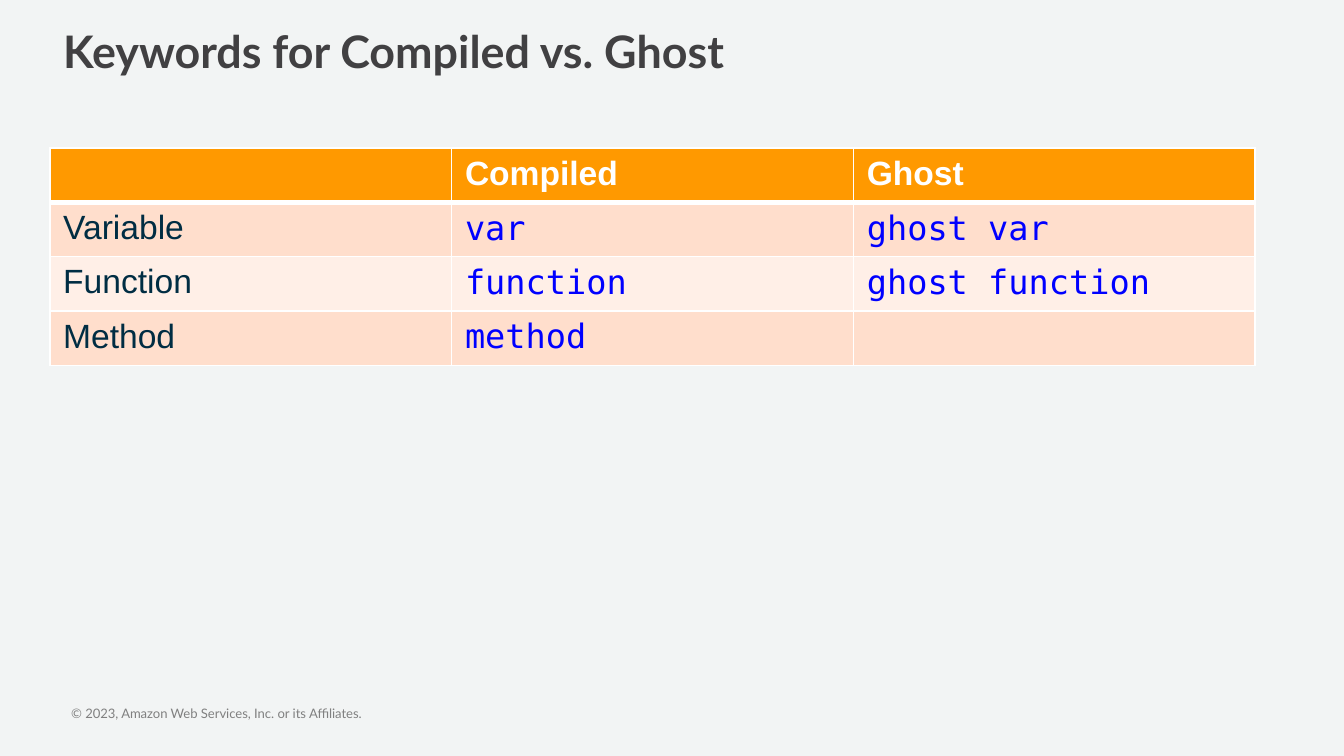
from lxml import etree
from pptx import Presentation
from pptx.dml.color import RGBColor
from pptx.enum.text import MSO_ANCHOR, MSO_AUTO_SIZE, PP_ALIGN
from pptx.oxml.ns import qn
from pptx.util import Inches, Pt

LEFT = PP_ALIGN.LEFT
TOP = MSO_ANCHOR.TOP
NO_FIT = MSO_AUTO_SIZE.NONE

HEADER = "FF9900"
BANDS = ["FFDECC", "FFEFE7"]
ROWS = [
    ["", "Compiled", "Ghost"],
    ["Variable", "var", "ghost var"],
    ["Function", "function", "ghost function"],
    ["Method", "method", ""],
]


def rgb(value):
    return RGBColor.from_string(value)


def style(p, name, size, color, bold=False):
    p.alignment = LEFT
    p.font.name = name
    p.font.size = Pt(size)
    p.font.bold = bold
    p.font.color.rgb = rgb(color)


def add_title(s, x, y, w, h, text):
    sp = s.shapes.title
    sp.left, sp.top, sp.width, sp.height = map(Inches, (x, y, w, h))
    tf = sp.text_frame
    tf.text = text
    tf.auto_size = NO_FIT
    tf.vertical_anchor = TOP
    style(tf.paragraphs[0], "Lato", 24, "414042", True)


def set_borders(cell, top, bottom):
    tc_pr = cell._tc.get_or_add_tcPr()
    for side, width in (("L", 1), ("R", 1), ("T", top), ("B", bottom)):
        ln = etree.SubElement(tc_pr, qn(f"a:ln{side}"), w=str(Pt(width)))
        fill = etree.SubElement(ln, qn("a:solidFill"))
        etree.SubElement(fill, qn("a:srgbClr"), val="FFFFFF")


def add_keyword_table(s, x, y, w, h, rows):
    box = map(Inches, (x, y, w, h))
    table = s.shapes.add_table(len(rows), len(rows[0]), *box).table
    for i, row in enumerate(rows):
        for j, text in enumerate(row):
            cell = table.cell(i, j)
            set_borders(cell, 3 if i == 1 else 1, 3 if i == 0 else 1)
            cell.fill.solid()
            cell.fill.fore_color.rgb = rgb(BANDS[(i - 1) % 2] if i else HEADER)
            cell.text = text
            p = cell.text_frame.paragraphs[0]
            if i == 0:
                style(p, "Arial", 18, "FFFFFF", True)
            elif j == 0:
                style(p, "Arial", 18, "002D43")
            else:
                style(p, "DejaVu Sans Mono", 18, "0000FF")


def add_footer(s, x, y, w, h, text):
    tf = s.shapes.add_textbox(*map(Inches, (x, y, w, h))).text_frame
    tf.word_wrap = True
    tf.margin_left = tf.margin_right = tf.margin_top = tf.margin_bottom = 0
    tf.text = text
    style(tf.paragraphs[0], "Lato", 7, "808080")


def main():
    prs = Presentation()
    prs.slide_width = Inches(10)
    prs.slide_height = prs.slide_width * 9 // 16
    s = prs.slides.add_slide(prs.slide_layouts[5])
    s.background.fill.solid()
    s.background.fill.fore_color.rgb = rgb("F2F4F4")
    add_footer(s, 0.53, 5.25, 4.86, 0.12,
               "© 2023, Amazon Web Services, Inc. or its Affiliates.")
    add_title(s, 0.37, 0.13, 8.97, 0.6, "Keywords for Compiled vs. Ghost")
    add_keyword_table(s, 0.37, 1.1, 8.97, 1.62, ROWS)
    prs.save("out.pptx")


if __name__ == "__main__":
    main()
